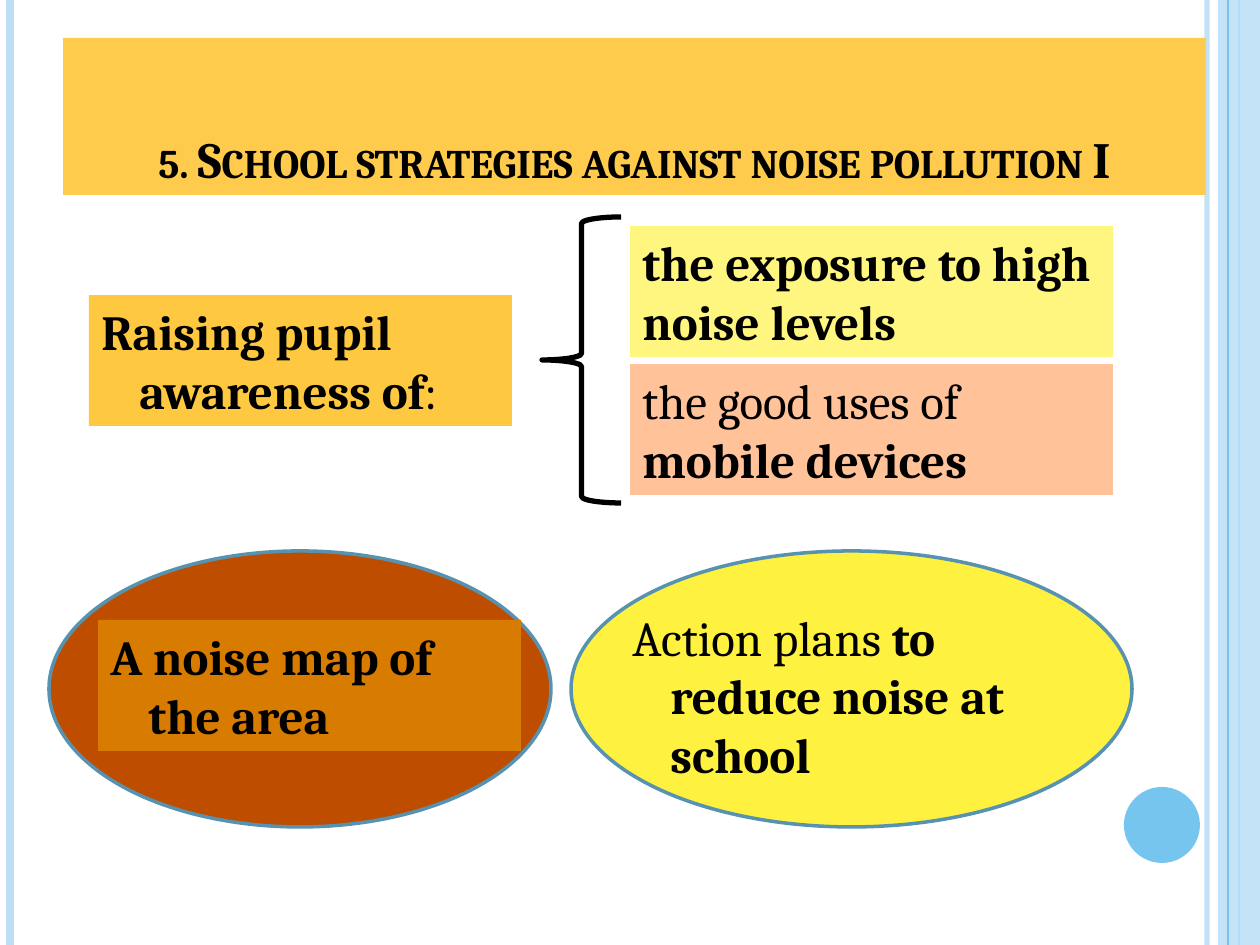
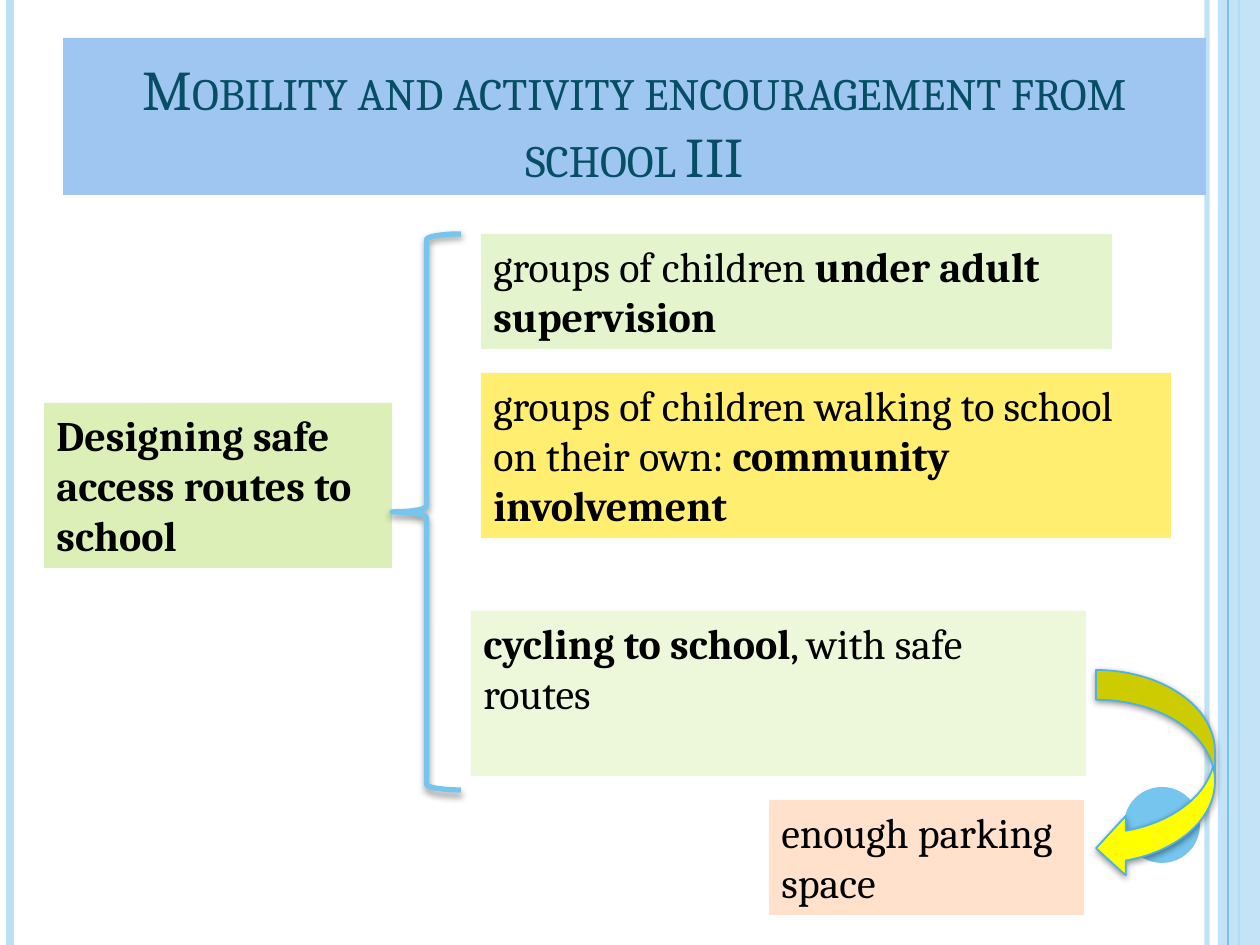
from lxml import etree
from pptx import Presentation
from pptx.dml.color import RGBColor
from pptx.enum.shapes import MSO_CONNECTOR, MSO_SHAPE as SHAPE
from pptx.enum.text import MSO_ANCHOR as ANCHOR, PP_ALIGN as ALIGN
from pptx.oxml.ns import qn
from pptx.util import Emu, Pt

PX = 914400 / 126
WIDTH, HEIGHT = 1260, 945
TITLE_BOX = (63, 38, 1143, 157)
FONT = "Cambria"
BLACK, PALE_BLUE, SKY_BLUE = "000000", "BDDFF6", "76C5EF"
HANG = 38


def px(n):
    """Turn pixels into EMU."""
    return Emu(round(n * PX))


def rgb(value):
    """Turn a hex string into a colour."""
    return RGBColor.from_string(value)


def set_alpha(fill, percent):
    """Make the solid fill of a shape or line partly transparent."""
    color = next(fill.iter(qn("a:srgbClr")))
    etree.SubElement(color, qn("a:alpha"), val=str(percent * 1000))


def add_shadow(sp, alpha, distance):
    """Give a shape a soft shadow that falls straight down."""
    effects = sp._element.spPr.find(qn("a:effectLst"))
    shadow = etree.SubElement(effects, qn("a:outerShdw"), blurRad=str(Pt(4)),
                              dist=str(Pt(distance)), dir="5400000", rotWithShape="0")
    color = etree.SubElement(shadow, qn("a:srgbClr"), val=BLACK)
    etree.SubElement(color, qn("a:alpha"), val=str(alpha * 1000))


def add_shape(s, kind, box, fill=None, line=None, weight=1):
    """Draw a preset shape with an optional fill and outline."""
    sp = s.shapes.add_shape(kind, *map(px, box))
    sp.shadow.inherit = False
    if fill:
        sp.fill.solid()
        sp.fill.fore_color.rgb = rgb(fill)
    else:
        sp.fill.background()
    if line:
        sp.line.color.rgb = rgb(line)
        sp.line.width = Pt(weight)
    else:
        sp.line.fill.background()
    return sp


def add_rule(s, x, color, weight):
    """Draw a vertical line over the full height of the slide."""
    rule = s.shapes.add_connector(MSO_CONNECTOR.STRAIGHT, px(x), 0, px(x), px(HEIGHT))
    rule.line.color.rgb = rgb(color)
    rule.line.width = Pt(weight)
    etree.SubElement(rule._element.spPr, qn("a:effectLst"))
    return rule


def write(sp, runs, size, color=BLACK, align=ALIGN.LEFT, anchor=ANCHOR.TOP, hang=0):
    """Fill a shape with one paragraph of (text, bold) runs."""
    tf = sp.text_frame
    tf.word_wrap = True
    tf.vertical_anchor = anchor
    p = tf.paragraphs[0]
    p.alignment = align
    if hang:
        pPr = p._p.get_or_add_pPr()
        pPr.set("marL", str(px(hang)))
        pPr.set("indent", str(px(-hang)))
    for text, bold in runs:
        r = p.add_run()
        r.text = text
        r.font.name = FONT
        r.font.size = Pt(size)
        r.font.bold = bold
        r.font.color.rgb = rgb(color)
    return p


def add_label(s, box, fill, runs, size, hang=0):
    """Draw a coloured box with text."""
    write(add_shape(s, SHAPE.RECTANGLE, box, fill), runs, size, hang=hang)


def add_frame(s):
    """Draw the side lines, right band and dot that every slide has."""
    edge = add_rule(s, 1207, PALE_BLUE, 3)
    set_alpha(edge._element.spPr, 93)
    add_rule(s, 10, PALE_BLUE, 4.5)
    add_rule(s, 1239, SKY_BLUE, 1.5)
    band = add_shape(s, SHAPE.RECTANGLE, (1218, 0, WIDTH - 1218, HEIGHT), PALE_BLUE)
    set_alpha(band._element.spPr, 87)
    add_rule(s, 1228, SKY_BLUE, 0.75)
    add_shape(s, SHAPE.OVAL, (1124, 787, 76, 76), SKY_BLUE)


def add_title(s, text, fill, size, color, bold):
    """Draw the title band with small capitals."""
    sp = add_shape(s, SHAPE.RECTANGLE, TITLE_BOX, fill)
    p = write(sp, [(text, bold)], size, color, ALIGN.CENTER, ANCHOR.BOTTOM)
    p.runs[0].font._element.set("cap", "small")


def new_slide(prs, *title):
    """Add a blank slide with the shared frame and a title."""
    s = prs.slides.add_slide(prs.slide_layouts[6])
    add_frame(s)
    add_title(s, *title)
    return s


def add_awareness(s, x, y):
    """Draw the awareness label, its brace and the two topics."""
    add_label(s, (x, y + 78, 423, 131), "FEC840",
              [("Raising pupil awareness of", True), (":", False)], 28, HANG)
    topics = [("FFF67F", [("the exposure to high noise levels", True)]),
              ("FFC299", [("the good uses of ", False), ("mobile devices", True)])]
    for i, (fill, runs) in enumerate(topics):
        add_label(s, (x + 541, y + 9 + 138 * i, 483, 131), fill, runs, 28)
    add_shape(s, SHAPE.LEFT_BRACE, (x + 453, y, 79, 286), line=BLACK, weight=3)


def add_ellipse_note(s, box, fill, note_box, note_fill, runs):
    """Draw an ellipse with a note placed relative to it."""
    x, y = box[:2]
    dx, dy, w, h = note_box
    add_shape(s, SHAPE.OVAL, box, fill, "5792B1", 2)
    add_label(s, (x + dx, y + dy, w, h), note_fill, runs, 28, HANG)


def add_routes(s, x, y):
    """Draw the safe routes label, its brace, the options and the arrow."""
    labels = [
        ((0, 169, 348, 165), "DBEFB6", [("Designing safe access routes to school", True)]),
        ((437, 0, 631, 115), "E4F4CD",
         [("groups of children ", False), ("under adult supervision", True)]),
        ((437, 139, 690, 165), "FFEE70",
         [("groups of children walking to school on their own: ", False),
          ("community involvement", True)]),
        ((427, 377, 615, 165), "EDF7DA",
         [("cycling to school", True), (", with safe routes", False)]),
        ((725, 566, 315, 115), "FFE1CC", [("enough parking space", False)]),
    ]
    for (dx, dy, w, h), fill, runs in labels:
        add_label(s, (x + dx, y + dy, w, h), fill, runs, 24)
    brace = add_shape(s, SHAPE.LEFT_BRACE, (x + 348, y, 69, 556), line=SKY_BLUE, weight=3)
    add_shadow(brace, 40, 2)
    arrow = add_shape(s, SHAPE.CURVED_LEFT_ARROW, (x + 1052, y + 436, 119, 208),
                      "FFFF00", "4BB1E7", 1)
    add_shadow(arrow, 42, 1.6)


def build_noise_slide(prs):
    """Build the slide on noise pollution."""
    s = new_slide(prs, "5. School strategies against noise pollution I",
                  "FECB4C", 29, BLACK, True)
    add_awareness(s, 89, 217)
    add_ellipse_note(s, (571, 551, 561, 276), "FFF13F", (49, 50, 473, 190), None,
                     [("Action plans ", False), ("to reduce noise at school", True)])
    add_ellipse_note(s, (49, 551, 502, 276), "BF4D00", (49, 69, 423, 131), "D77C01",
                     [("A noise map of the area", True)])


def build_mobility_slide(prs):
    """Build the slide on mobility and activity."""
    s = new_slide(prs, "Mobility and activity encouragement from school III",
                  "9FC6F0", 32, "054E65", False)
    add_routes(s, 44, 234)


def main():
    """Build and save the presentation."""
    prs = Presentation()
    prs.slide_width, prs.slide_height = px(WIDTH), px(HEIGHT)
    build_noise_slide(prs)
    build_mobility_slide(prs)
    prs.save("out.pptx")


if __name__ == "__main__":
    main()
